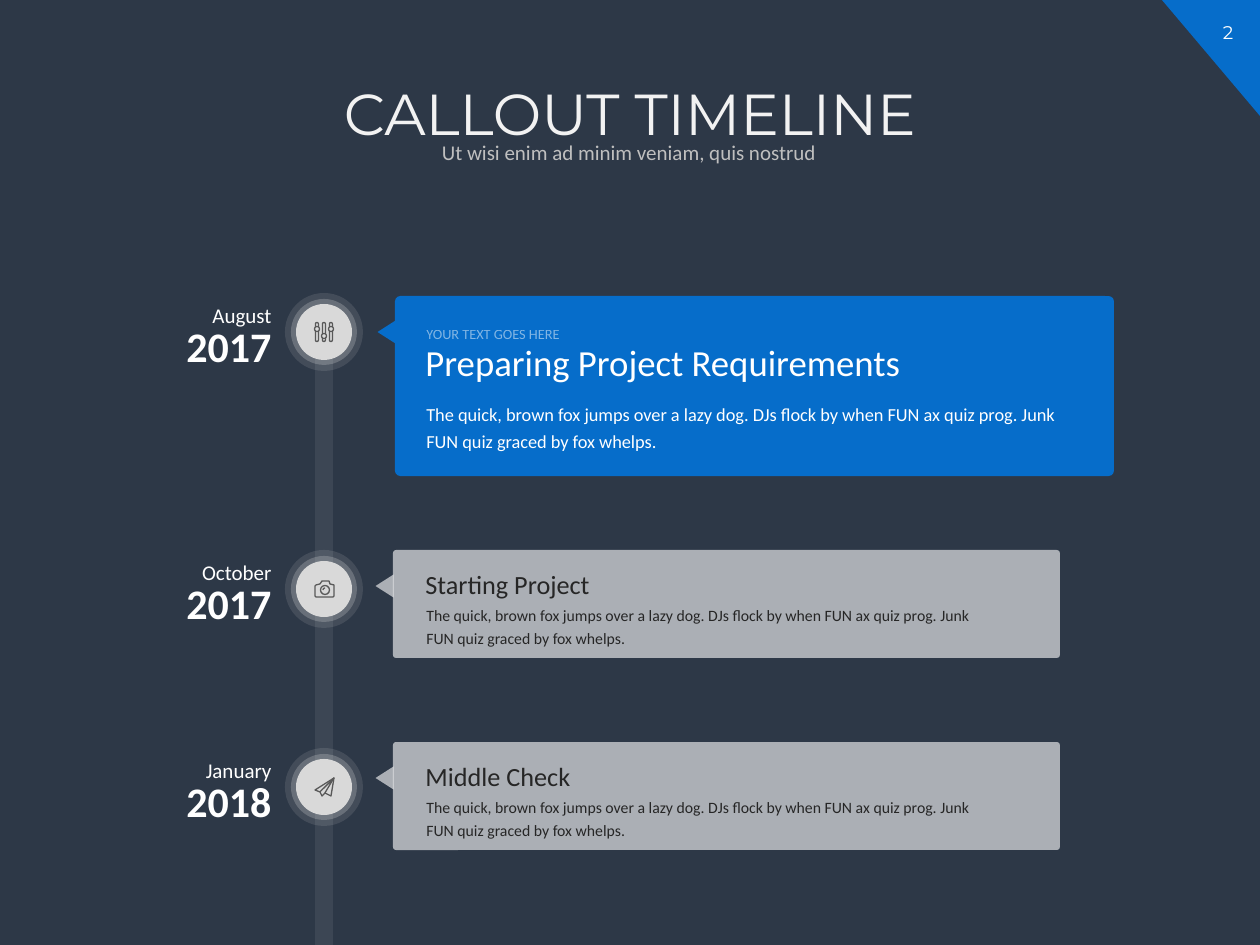
"""Build the callout timeline slide."""
from pptx import Presentation
from pptx import util as u
from pptx.dml.color import RGBColor
from pptx.enum import shapes, text
from pptx.oxml.ns import qn

SCALE = 914400 / 126
COLOURS = {
    "back": "2D3847", "accent": "066DCA", "white": "FFFFFF", "heading": "F2F2F2",
    "muted": "BFBFBF", "badge": "D9D9D9", "icon": "595959", "ink": "262626",
}
SHAPE = shapes.MSO_SHAPE
ALIGN = text.PP_ALIGN
SPINE_X = 324
STORY = ("The quick, brown fox jumps over a lazy dog. DJs flock by when FUN ax quiz prog. "
         "Junk FUN quiz graced by fox whelps.")


def px(length):
    return u.Emu(round(length * SCALE))


def rgb(name):
    return RGBColor.from_string(COLOURS[name])


def fade(element, opacity):
    if opacity < 100:
        for colour in element.iter(qn("a:srgbClr")):
            alpha = colour.makeelement(qn("a:alpha"), {"val": str(opacity * 1000)})
            colour.append(alpha)


class Timeline:
    """Holds the style and the current slide."""

    def __init__(self, slide):
        self.slide = slide
        slide.background.fill.solid()
        slide.background.fill.fore_color.rgb = rgb("back")

    def format(self, frame, words, size, colour, font="Calibri", align=ALIGN.LEFT,
               spacing=1.0, bold=False, opacity=100):
        frame.word_wrap = True
        frame.text = words
        paragraph = frame.paragraphs[0]
        paragraph.alignment = align
        paragraph.line_spacing = spacing
        paragraph.font.name = font
        paragraph.font.size = u.Pt(size)
        paragraph.font.bold = bold
        paragraph.font.color.rgb = rgb(colour)
        fade(paragraph._p, opacity)

    def title(self, box, words):
        title = self.slide.shapes.title
        title.left, title.top, title.width, title.height = map(px, box)
        title.text_frame.auto_size = text.MSO_AUTO_SIZE.NONE
        title.text_frame.vertical_anchor = text.MSO_ANCHOR.TOP
        self.format(title.text_frame, words, 33, "heading", "Montserrat", ALIGN.CENTER, 0.9)

    def label(self, box, words, size, colour, anchor=text.MSO_ANCHOR.TOP, **style):
        frame = self.slide.shapes.add_textbox(*map(px, box)).text_frame
        frame.vertical_anchor = anchor
        self.format(frame, words, size, colour, **style)

    def block(self, kind, box, colour, opacity=100, rotation=0):
        block = self.slide.shapes.add_shape(kind, *map(px, box))
        block.shadow.inherit = False
        block.fill.solid()
        block.fill.fore_color.rgb = rgb(colour)
        block.line.fill.background()
        block.rotation = rotation
        fade(block.fill._xPr, opacity)
        return block

    def outline(self, drawn):
        drawn.shadow.inherit = False
        drawn.fill.background()
        drawn.line.color.rgb = rgb("icon")
        drawn.line.width = u.Pt(0.75)

    def stroke(self, kind, x, y, width, height):
        drawn = self.block(kind, (x - width / 2, y - height / 2, width, height), "badge")
        self.outline(drawn)
        drawn.fill.solid()
        drawn.fill.fore_color.rgb = rgb("badge")
        return drawn

    def path_line(self, y, points, close=True):
        placed = [(SPINE_X + dx, y + dy) for dx, dy in points]
        builder = self.slide.shapes.build_freeform(*placed[0], scale=SCALE)
        builder.add_line_segments(placed[1:], close=close)
        self.outline(builder.convert_to_shape())

    def date(self, y, month, year):
        self.label((120, y - 18, 164, 63), year, 24, "white", align=ALIGN.RIGHT, bold=True)
        self.label((135, y - 41, 149, 42), month, 12, "white", align=ALIGN.RIGHT, spacing=1.2)

    def badge(self, y, icon):
        for size, opacity in ((78, 13), (66, 25), (56, 100)):
            self.block(SHAPE.OVAL, (SPINE_X - size / 2, y - size / 2, size, size),
                       "badge", opacity)
        icon(y)

    def sliders(self, y):
        for dx, knob in ((-7, -3), (0, 4), (7, -3)):
            bar = self.stroke(SHAPE.ROUNDED_RECTANGLE, SPINE_X + dx, y, 3, 19)
            bar.adjustments[0] = 0.5
            self.stroke(SHAPE.OVAL, SPINE_X + dx, y + knob, 5, 5)

    def camera(self, y):
        self.path_line(y, [(-8, -4), (-4, -5), (-2, -8), (5, -8), (6, -5), (10, -4),
                           (10, 7), (9, 8), (-8, 8), (-9, 7), (-9, -3)])
        self.stroke(SHAPE.OVAL, SPINE_X + 1, y + 1, 9, 9)
        glint = self.stroke(SHAPE.ARC, SPINE_X + 1, y + 1, 4, 4)
        glint.adjustments[0], glint.adjustments[1] = 108, 162
        glint.fill.background()

    def paper_plane(self, y):
        tip = (10, -9)
        self.path_line(y, [tip, (-9, 3), (-4, 5), (-2, 9), (1, 6), (7, 9)])
        self.path_line(y, [(-4, 5), tip, (1, 6)], close=False)

    def card(self, box, colour, opacity=100):
        left, top = box[:2]
        card = self.block(SHAPE.ROUNDED_RECTANGLE, box, colour, opacity)
        card.adjustments[0] = 0.03
        self.block(SHAPE.ISOSCELES_TRIANGLE, (left - 20, top + 27, 23, 18),
                   colour, opacity, rotation=270)

    def main_card(self, top, heading):
        self.card((395, top, 719, 180), "accent")
        self.label((414, top + 97, 680, 67), STORY, 10.5, "white", spacing=1.2)
        self.label((413, top + 38, 663, 57), heading, 21, "white")
        self.label((414, top + 20, 680, 34), "YOUR TEXT GOES HERE", 8.2, "white",
                   spacing=1.2, opacity=50)

    def small_card(self, top, heading):
        self.card((393, top, 667, 108), "white", 60)
        self.label((414, top + 46, 582, 58), STORY, 9, "ink", spacing=1.2)
        self.label((413, top + 12, 663, 44), heading, 15, "ink")


def main():
    deck = Presentation()
    deck.slide_width, deck.slide_height = px(1260), px(945)
    page = Timeline(deck.slides.add_slide(deck.slide_layouts[5]))

    page.block(SHAPE.RIGHT_TRIANGLE, (1162, 0, 98, 116), "accent", rotation=180)
    page.label((1196, 15, 64, 35), "2", 10.5, "white", font="Montserrat", align=ALIGN.CENTER)
    page.title((72, 79, 1116, 92), "CALLOUT TIMELINE")
    page.label((175, 137, 908, 33), "Ut wisi enim ad minim veniam, quis nostrud", 12, "muted",
               text.MSO_ANCHOR.MIDDLE, align=ALIGN.CENTER, spacing=0.9)
    page.block(SHAPE.RECTANGLE, (315, 317, 18, 628), "badge", 9)

    events = (
        (332, "August", "2017", page.sliders, page.main_card, 296, "Preparing Project Requirements"),
        (589, "October", "2017", page.camera, page.small_card, 550, "Starting Project"),
        (787, "January", "2018", page.paper_plane, page.small_card, 742, "Middle Check"),
    )
    for y, month, year, icon, card, top, heading in events:
        page.date(y, month, year)
        card(top, heading)
        page.badge(y, icon)

    deck.save("out.pptx")


if __name__ == "__main__":
    main()
